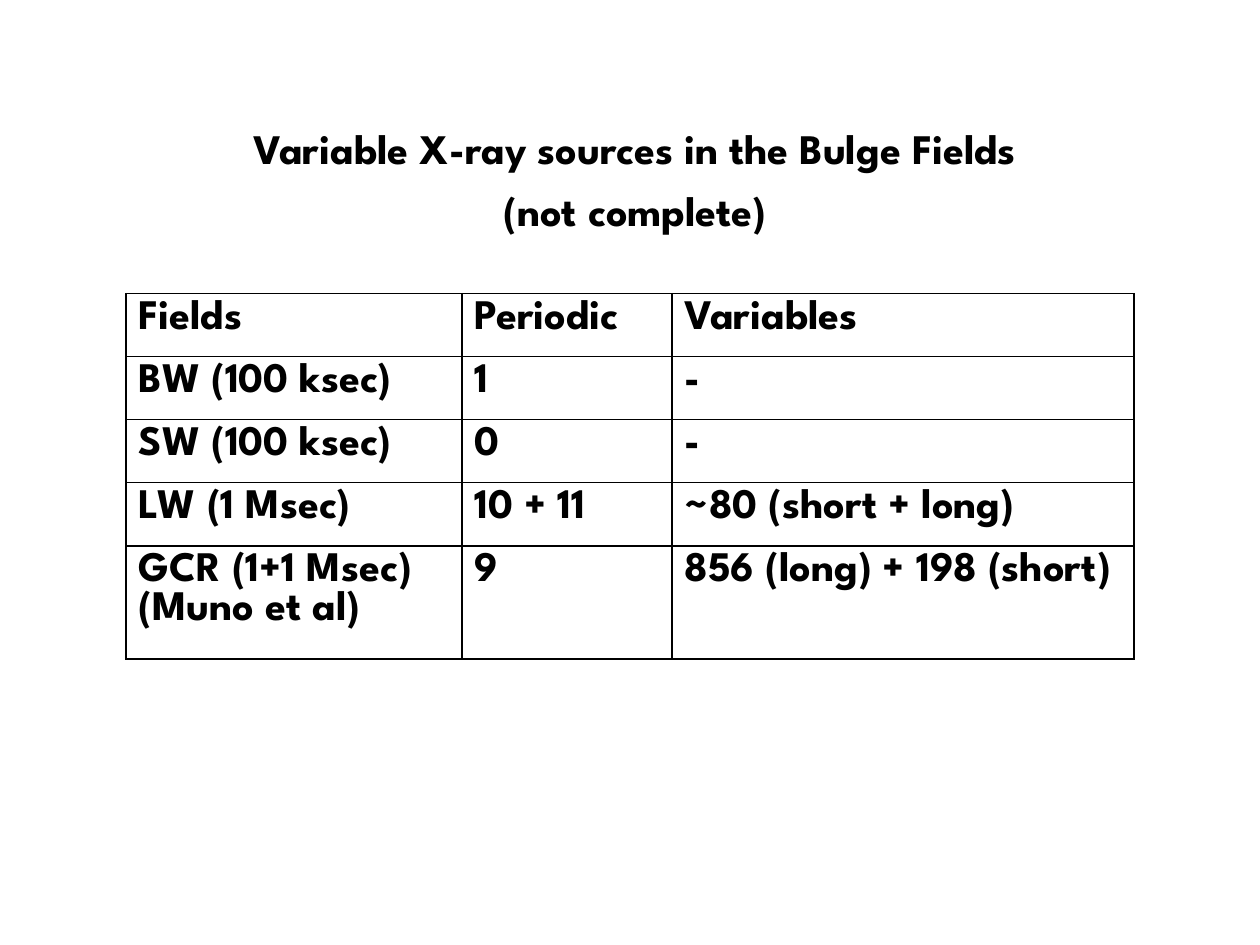
"""Build a slide with a table of variable X-ray sources in the bulge fields."""
from dataclasses import dataclass

import pptx
import pptx.dml.color
import pptx.enum.text
import pptx.oxml
import pptx.oxml.ns
import pptx.util
from pptx.util import Inches


@dataclass(frozen=True)
class Theme:
    """Colours, type and line sizes of the slide."""
    font: str = "League Spartan"
    size: int = 24
    ink: str = "000000"
    border: int = 1
    title_gap: int = 7


THEME = Theme()
TITLE = ("Variable X-ray sources in the Bulge Fields", "(not complete)")
ROWS = (
    ("Fields", "Periodic", "Variables"),
    ("BW (100 ksec)", "1", "-"),
    ("SW (100 ksec)", "0", "-"),
    ("LW (1 Msec)", "10 + 11", "~80 (short + long)"),
    ("GCR (1+1 Msec)\n(Muno et al)", "9", "856 (long) + 198 (short)"),
)
COLUMN_WIDTHS = (2.67, 1.67, 3.67)
ROW_HEIGHTS = (0.5, 0.5, 0.5, 0.5, 0.9)


def write_text(tf, text):
    """Fill a text frame with one bold paragraph per line."""
    tf.text = text
    for p in tf.paragraphs:
        p.font.name = THEME.font
        p.font.size = pptx.util.Pt(THEME.size)
        p.font.bold = True
        p.font.color.rgb = pptx.dml.color.RGBColor.from_string(THEME.ink)


def draw_borders(cell):
    """Give a cell a solid line on all four sides."""
    tc_pr = cell._tc.get_or_add_tcPr()
    for side in ("lnL", "lnR", "lnT", "lnB"):
        tc_pr.append(pptx.oxml.parse_xml(
            f'<a:{side} {pptx.oxml.ns.nsdecls("a")} w="{pptx.util.Pt(THEME.border)}">'
            f'<a:solidFill><a:srgbClr val="{THEME.ink}"/></a:solidFill></a:{side}>'))


def add_title(slide, left, top, width, height):
    """Place the centred title in the given box."""
    tf = slide.shapes.add_textbox(left, top, width, height).text_frame
    tf.word_wrap = True
    write_text(tf, "\n".join(TITLE))
    for p in tf.paragraphs:
        p.alignment = pptx.enum.text.PP_ALIGN.CENTER
        p.space_before = pptx.util.Pt(THEME.title_gap)


def add_source_table(slide, left, top, width, height):
    """Place the bordered table of sources in the given box."""
    table = slide.shapes.add_table(
        len(ROWS), len(COLUMN_WIDTHS), left, top, width, height).table
    table.horz_banding = False
    for column, share in zip(table.columns, COLUMN_WIDTHS):
        column.width = int(width * share / sum(COLUMN_WIDTHS))
    for row, share, texts in zip(table.rows, ROW_HEIGHTS, ROWS):
        row.height = int(height * share / sum(ROW_HEIGHTS))
        for cell, text in zip(row.cells, texts):
            write_text(cell.text_frame, text)
            draw_borders(cell)
            cell.fill.background()


def main():
    """Build and save the presentation."""
    prs = pptx.Presentation()
    prs.slide_width, prs.slide_height = Inches(10), Inches(7.5)
    slide = prs.slides.add_slide(prs.slide_layouts[6])
    add_title(slide, Inches(0.5), Inches(0.92), Inches(9.08), Inches(0.91))
    add_source_table(slide, Inches(1), Inches(2.33), Inches(8), Inches(2.9))
    prs.save("out.pptx")


if __name__ == "__main__":
    main()
